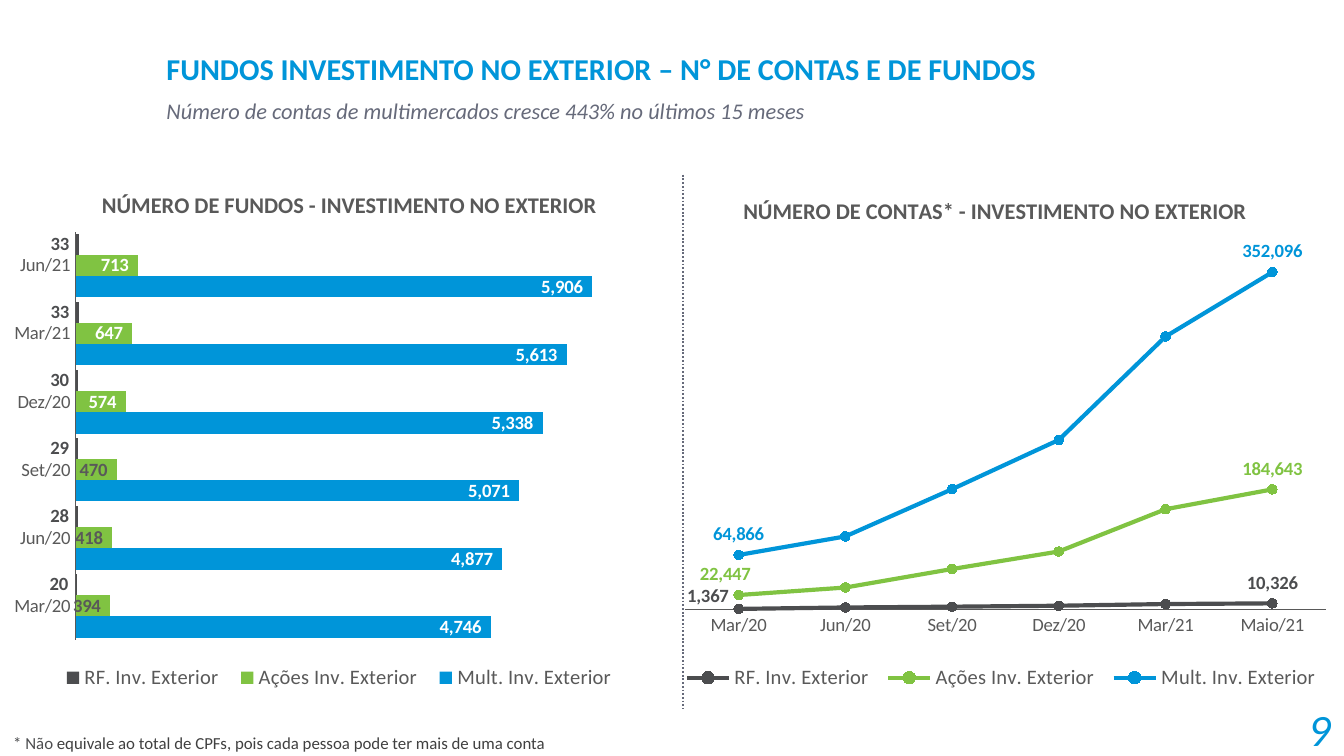
from lxml.etree import SubElement
from pptx import Presentation
from pptx.chart.data import CategoryChartData
from pptx.dml.color import RGBColor
from pptx.enum.chart import (XL_CHART_TYPE, XL_LABEL_POSITION, XL_LEGEND_POSITION,
                             XL_MARKER_STYLE, XL_TICK_LABEL_POSITION, XL_TICK_MARK)
from pptx.enum.dml import MSO_LINE
from pptx.enum.shapes import MSO_CONNECTOR
from pptx.enum.text import MSO_ANCHOR, PP_ALIGN
from pptx.oxml import parse_xml
from pptx.oxml.ns import nsdecls, qn
from pptx.util import Inches, Pt

COLORS = {"blue": "0095D9", "green": "80C342", "dark": "4C4D4F", "slate": "666A7A",
          "gray": "595959", "note": "404040", "white": "FFFFFF", "black": "000000"}
NUMBER_FORMAT = r'_-* #,##0_-;\-* #,##0_-;_-* "-"??_-;_-@_'

MONTHS = ["Mar/20", "Jun/20", "Set/20", "Dez/20", "Mar/21"]
RF, ACOES, MULT = (f"{name} Inv. Exterior" for name in ("RF.", "Ações", "Mult."))
SERIES_COLORS = {RF: "dark", ACOES: "green", MULT: "blue"}
FUNDS = {MULT: [4746, 4877, 5071, 5338, 5613, 5906],
         ACOES: [394, 418, 470, 574, 647, 713],
         RF: [20, 28, 29, 30, 33, 33]}
ACCOUNTS = {RF: [1367, 3653, 4919, 6430, 9177, 10326],
            ACOES: [22447, 32284, 61032, 87873, 153671, 184643],
            MULT: [64866, 82833, 129348, 180877, 279864, 352096]}
FIRST_LABEL_SHIFTS = {RF: (-0.046, 0.014), ACOES: (-0.02, 0)}


def rgb(color):
    return RGBColor.from_string(COLORS[color])


def set_font(font, size, color, **styles):
    for name, value in {"name": "Calibri", "size": Pt(size), **styles}.items():
        setattr(font, name, value)
    font.color.rgb = rgb(color)


def add_text(s, box, runs, size, anchor=MSO_ANCHOR.TOP, align=PP_ALIGN.LEFT, **styles):
    """Place one paragraph made of (text, color) runs."""
    tf = s.shapes.add_textbox(*map(Inches, box)).text_frame
    tf.word_wrap = True
    tf.vertical_anchor = anchor
    p = tf.paragraphs[0]
    p.alignment = align
    for text, color in runs:
        r = p.add_run()
        r.text = text
        set_font(r.font, size, color, **styles)


def set_layout(parent, index, place, **modes):
    """Give a chart part a manual layout, as fractions of the chart."""
    for old in parent.findall(qn("c:layout")):
        parent.remove(old)
    layout = parse_xml(f"<c:layout {nsdecls('c')}><c:manualLayout/></c:layout>")
    for tag, value in {**modes, **dict(zip("xywh", place))}.items():
        SubElement(layout[0], qn(f"c:{tag}")).set("val", str(value))
    parent.insert(index, layout)


def add_chart(s, box, kind, title, places, categories, data, maximum):
    """Add a chart with a hidden value axis; places holds title, plot and legend."""
    chart_data = CategoryChartData(number_format=NUMBER_FORMAT)
    chart_data.categories = categories
    for name, values in data.items():
        chart_data.add_series(name, values)
    chart = s.shapes.add_chart(kind, *map(Inches, box), chart_data).chart
    set_font(chart.font, 10, "black")

    chart.has_title = True
    p = chart.chart_title.text_frame.paragraphs[0]
    r = p.add_run()
    r.text = title
    set_font(r.font, 12, "gray", bold=True)

    chart.has_legend = True
    chart.legend.position = XL_LEGEND_POSITION.BOTTOM
    chart.legend.include_in_layout = False
    set_font(chart.legend.font, 11, "gray")

    edges = {"xMode": "edge", "yMode": "edge"}
    set_layout(chart.chart_title._element, 1, places["title"], **edges)
    set_layout(chart._chartSpace.chart.plotArea, 0, places["plot"],
               layoutTarget="inner", **edges)
    set_layout(chart.legend._element, 1, places["legend"], **edges)

    value_axis, category_axis = chart.value_axis, chart.category_axis
    for name, value in {"visible": False, "has_major_gridlines": False,
                        "minimum_scale": 0, "maximum_scale": maximum}.items():
        setattr(value_axis, name, value)
    category_axis.major_tick_mark = XL_TICK_MARK.NONE
    category_axis.tick_label_position = XL_TICK_LABEL_POSITION.NEXT_TO_AXIS
    set_font(category_axis.tick_labels.font, 10, "gray")
    category_axis.format.line.color.rgb = rgb("gray")
    category_axis.format.line.width = Pt(0.75)
    return chart


def add_funds_chart(s, box):
    places = {"title": (0.147, 0.02), "plot": (0.115, 0.108, 0.883, 0.775),
              "legend": (0.08, 0.92, 0.83, 0.07)}
    chart = add_chart(s, box, XL_CHART_TYPE.BAR_CLUSTERED,
                      "NÚMERO DE FUNDOS - INVESTIMENTO NO EXTERIOR", places,
                      MONTHS + ["Jun/21"], FUNDS, 7000)
    plot = chart.plots[0]
    plot.gap_width = 20
    plot.vary_by_categories = False
    for series in plot.series:
        series.format.fill.solid()
        series.format.fill.fore_color.rgb = rgb(SERIES_COLORS[series.name])
        labels = series.data_labels
        for name, value in {"show_value": True, "number_format": NUMBER_FORMAT,
                            "number_format_is_linked": False,
                            "position": XL_LABEL_POSITION.INSIDE_END}.items():
            setattr(labels, name, value)
        set_font(labels.font, 10, "dark" if series.name == RF else "white", bold=True)
        if series.name == ACOES:
            for i in range(3):
                label = series.points[i].data_label
                set_font(label.font, 10, "gray", bold=True)
                label.position = XL_LABEL_POSITION.INSIDE_END


def add_accounts_chart(s, box):
    places = {"title": (0.117, 0.033), "plot": (0.036, 0.123, 0.961, 0.703),
              "legend": (0.02, 0.92, 0.98, 0.07)}
    chart = add_chart(s, box, XL_CHART_TYPE.LINE_MARKERS_STACKED,
                      "NÚMERO DE CONTAS* - INVESTIMENTO NO EXTERIOR", places,
                      MONTHS + ["Maio/21"], ACCOUNTS, 600000)
    plot = chart.plots[0]
    plot.vary_by_categories = False
    for series in plot.series:
        color = SERIES_COLORS[series.name]
        series.smooth = False
        series.format.line.color.rgb = rgb(color)
        series.format.line.width = Pt(2.25)
        marker = series.marker
        marker.style = XL_MARKER_STYLE.CIRCLE
        marker.size = 5
        marker.format.fill.solid()
        marker.format.fill.fore_color.rgb = rgb(color)
        marker.format.line.color.rgb = rgb(color)
        for i in (0, len(MONTHS)):
            label = series.points[i].data_label
            set_font(label.font, 10, color, bold=True)
            label.position = XL_LABEL_POSITION.ABOVE
            if i == 0 and series.name in FIRST_LABEL_SHIFTS:
                set_layout(label._get_or_add_dLbl(), 1, FIRST_LABEL_SHIFTS[series.name])


def add_divider(s, x, top, bottom):
    line = s.shapes.add_connector(MSO_CONNECTOR.STRAIGHT, *map(Inches, (x, top, x, bottom)))
    line.line.color.rgb = rgb("slate")
    line.line.width = Pt(1)
    line.line.dash_style = MSO_LINE.ROUND_DOT
    SubElement(line._element.spPr, qn("a:effectLst"))


def add_header(s, left, top):
    add_text(s, (left, top, 7.01, 0.59),
             [("FUNDOS INVESTIMENTO NO EXTERIOR – N° DE CONTAS E DE FUNDOS", "blue")],
             16.2, MSO_ANCHOR.MIDDLE, bold=True)
    add_text(s, (left, top + 0.46, 7.36, 0.28),
             [("Número de contas de multimercados cresce 443% no últimos 15 meses", "slate")],
             12, italic=True)


def add_footer(s, top):
    add_text(s, (9.41, top, 0.59, 0.4), [("9", "blue")], 24,
             MSO_ANCHOR.MIDDLE, PP_ALIGN.RIGHT, italic=True)
    add_text(s, (0, top + 0.18, 9.41, 0.25),
             [("* Não ", "dark"),
              ("equivale ao total de CPFs, pois cada pessoa pode ter mais de uma conta", "note")], 9)


def main():
    prs = Presentation()
    prs.slide_width, prs.slide_height = Inches(10), Inches(5.625)
    s = prs.slides.add_slide(prs.slide_layouts[6])
    add_header(s, 1.14, 0.21)
    add_divider(s, 5.08, 1.3, 5.27)
    add_footer(s, 5.22)
    add_funds_chart(s, (-0.03, 1.3, 5.16, 3.92))
    add_accounts_chart(s, (4.92, 1.3, 4.96, 3.92))
    prs.save("out.pptx")


if __name__ == "__main__":
    main()
